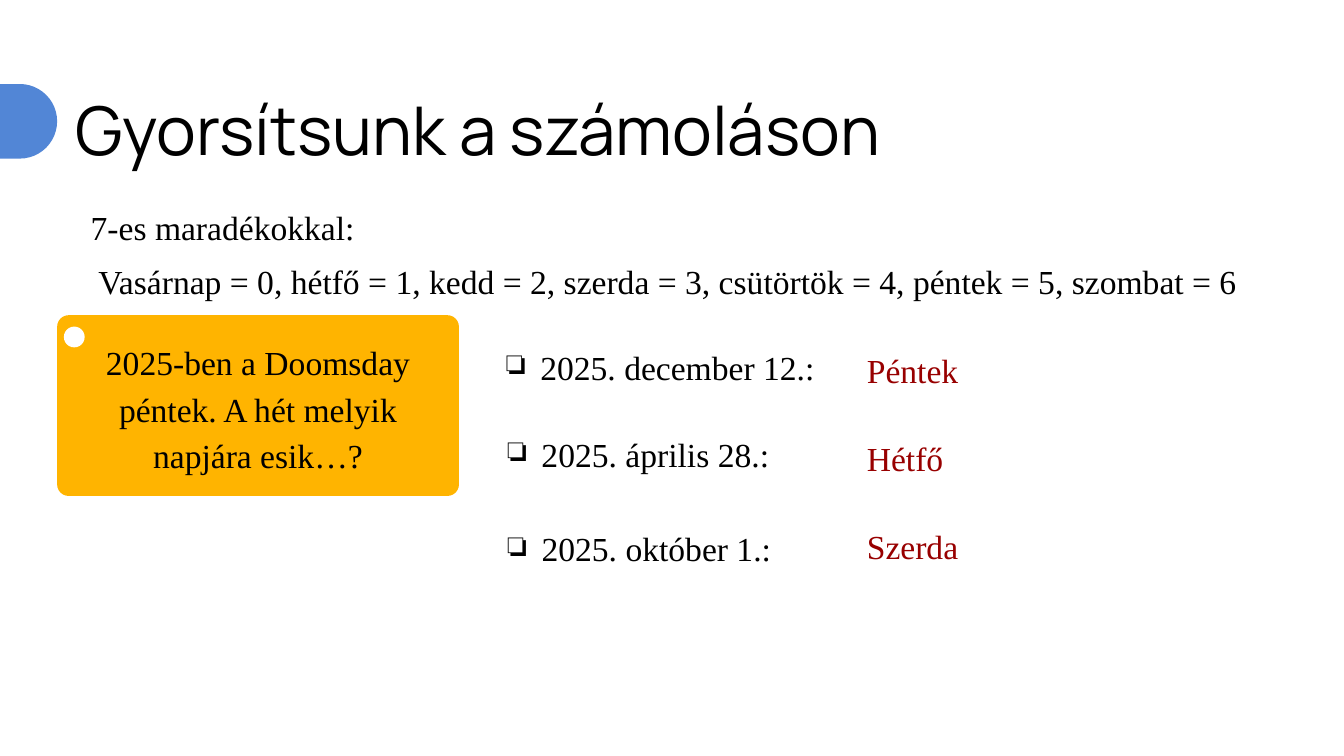
from lxml.etree import SubElement
from pptx import Presentation
from pptx.dml.color import RGBColor
from pptx.enum.shapes import MSO_SHAPE as SHAPE
from pptx.enum.text import MSO_ANCHOR as ANCHOR, MSO_AUTO_SIZE as AUTO, PP_ALIGN as ALIGN
from pptx.oxml.ns import qn
from pptx.util import Inches, Pt

BLACK = RGBColor(0x00, 0x00, 0x00)
WHITE = RGBColor(0xFF, 0xFF, 0xFF)
BLUE = RGBColor(0x52, 0x86, 0xD6)
AMBER = RGBColor(0xFF, 0xB4, 0x00)
DARK_RED = RGBColor(0x98, 0x00, 0x00)


class SlideBuilder:
    body_font = "Times New Roman"
    title_font = "Manrope"
    body_size = 36
    title_size = 72
    body_spacing = 1.16
    title_spacing = 1.1
    gap = 8
    hang = 0.5

    def __init__(self, slide):
        self.s = slide

    def frame(self, tf, inset):
        tf.word_wrap = True
        tf.margin_left = tf.margin_right = Inches(inset)
        tf.margin_top = tf.margin_bottom = Inches(inset)

    def add_text(self, p, text, color=BLACK, align=ALIGN.JUSTIFY, before=0, after=0):
        p.alignment = align
        p.line_spacing = self.body_spacing
        p.space_before, p.space_after = Pt(before), Pt(after)
        r = p.add_run()
        r.text = text
        r.font.name = self.body_font
        r.font.size = Pt(self.body_size)
        r.font.color.rgb = color
        return r

    def text_box(self, x, y, w, h, inset=0):
        tf = self.s.shapes.add_textbox(Inches(x), Inches(y), Inches(w), Inches(h)).text_frame
        self.frame(tf, inset)
        tf.auto_size = AUTO.SHAPE_TO_FIT_TEXT
        return tf

    def title(self, text, x, y, w, h):
        p = self.text_box(x, y, w, h).paragraphs[0]
        r = self.add_text(p, text, align=ALIGN.LEFT)
        p.line_spacing = self.title_spacing
        r.font.name = self.title_font
        r.font.size = Pt(self.title_size)

    def intro(self, first, second, x, y, w, h):
        tf = self.text_box(x, y, w, h)
        self.add_text(tf.paragraphs[0], first)
        self.add_text(tf.add_paragraph(), second, before=self.gap, after=self.gap)

    def date(self, text, x, y, w, h, inset):
        """Add a date with a hanging check-box bullet."""
        p = self.text_box(x, y, w, h, inset).paragraphs[0]
        self.add_text(p, text)
        pPr = p._p.get_or_add_pPr()
        pPr.set("marL", str(Inches(self.hang)))
        pPr.set("indent", str(-Inches(self.hang)))
        color = SubElement(SubElement(pPr, qn("a:buClr")), qn("a:srgbClr"))
        color.set("val", str(BLACK))
        SubElement(pPr, qn("a:buChar")).set("char", "❏")

    def answer(self, text, x, y, w, h):
        p = self.text_box(x, y, w, h).paragraphs[0]
        self.add_text(p, text, DARK_RED, after=self.gap)

    def shape(self, kind, x, y, w, h, fill, radius=None):
        sp = self.s.shapes.add_shape(kind, Inches(x), Inches(y), Inches(w), Inches(h))
        sp.shadow.inherit = False
        sp.fill.solid()
        sp.fill.fore_color.rgb = fill
        sp.line.fill.background()
        if radius is not None:
            sp.adjustments[0] = radius
        return sp

    def question(self, text, x, y, w, h):
        tf = self.shape(SHAPE.ROUNDED_RECTANGLE, x, y, w, h, AMBER, 0.064).text_frame
        self.frame(tf, 0.1)
        tf.vertical_anchor = ANCHOR.MIDDLE
        self.add_text(tf.paragraphs[0], text, align=ALIGN.CENTER, after=self.gap)


def main():
    prs = Presentation()
    prs.slide_width, prs.slide_height = Inches(20), Inches(11.25)
    slide = SlideBuilder(prs.slides.add_slide(prs.slide_layouts[6]))

    slide.title("Gyorsítsunk a számoláson", 1.12, 1.2, 18.88, 1.21)
    slide.shape(SHAPE.ROUNDED_RECTANGLE, -3.14, 1.25, 3.99, 1.11, BLUE, 0.5)
    slide.intro(
        "7-es maradékokkal:",
        " Vasárnap = 0, hétfő = 1, kedd = 2, szerda = 3, csütörtök = 4, péntek = 5, szombat = 6",
        1.35, 2.98, 17.73, 1.42)
    slide.question("2025-ben a Doomsday péntek. A hét melyik napjára esik…?",
                   0.85, 4.69, 5.98, 2.69)
    slide.shape(SHAPE.OVAL, 0.95, 4.86, 0.31, 0.31, WHITE)

    slide.date("2025. december 12.:", 7.54, 5.06, 5.2, 0.61, 0)
    slide.date("2025. április 28.:", 7.46, 6.26, 4.5, 0.81, 0.1)
    slide.date("2025. október 1.:", 7.46, 7.66, 4.42, 0.81, 0.1)

    for i, day in enumerate(("Péntek", "Hétfő", "Szerda")):
        slide.answer(day, 12.9, 5.11 + 1.31 * i, 6.46, 0.61)

    prs.save("out.pptx")


if __name__ == "__main__":
    main()
